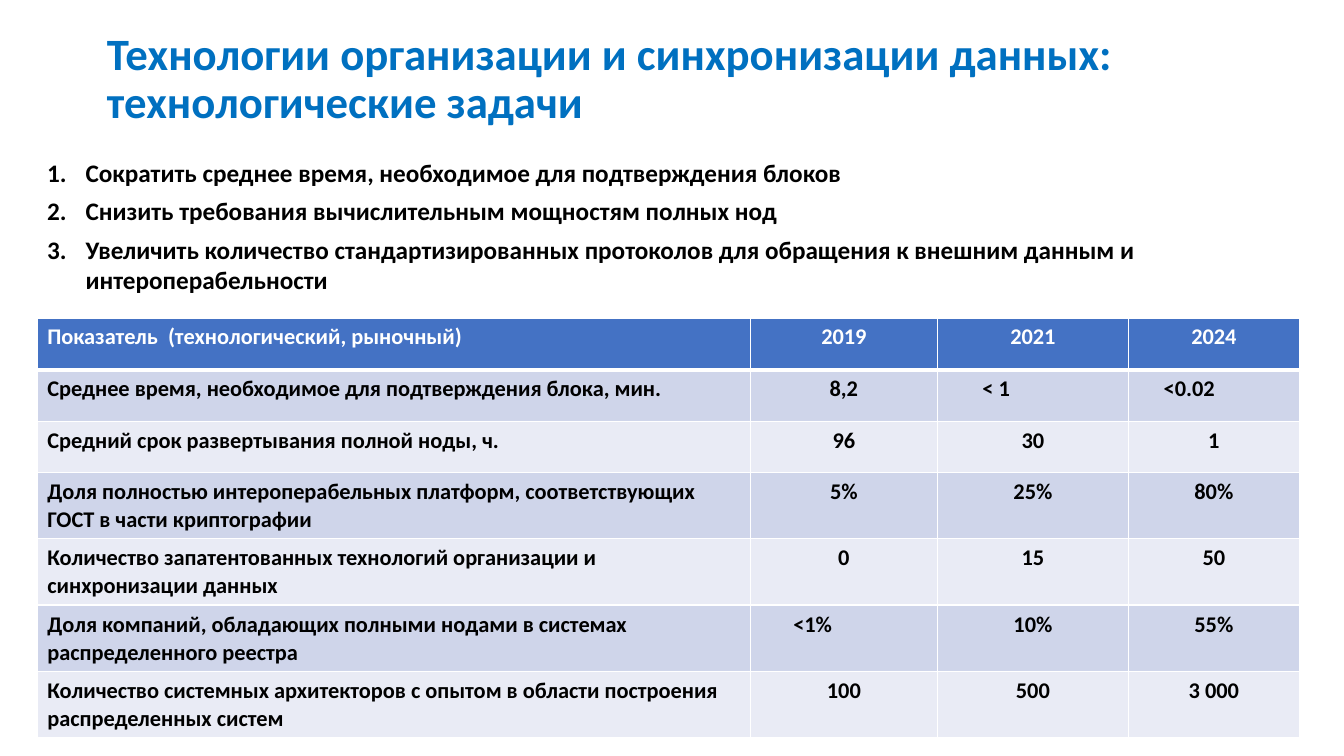
from lxml import etree
from pptx import Presentation
from pptx.dml.color import RGBColor
from pptx.enum import text
from pptx.oxml.ns import qn
from pptx import util as u

PX = 9144  # EMU in one px, 100 px to the inch
BLUE, BLACK, WHITE = "0070C0", "000000", "FFFFFF"
HEADER, BANDS = "4472C4", ("CFD5EA", "E9EBF5")

TITLE = "Технологии организации и синхронизации данных: технологические задачи"
TASKS = [
    "Сократить среднее время, необходимое для подтверждения блоков",
    "Снизить требования вычислительным мощностям полных нод",
    "Увеличить количество стандартизированных протоколов для обращения "
    "к внешним данным и интероперабельности",
]
ROWS = [
    ("Показатель  (технологический, рыночный)", "2019", "2021", "2024"),
    ("Среднее время, необходимое для подтверждения блока, мин.", "8,2", "< 1", "<0.02"),
    ("Средний срок развертывания полной ноды, ч.", "96", "30", "1"),
    ("Доля полностью интероперабельных платформ, соответствующих ГОСТ "
     "в части криптографии", "5%", "25%", "80%"),
    ("Количество запатентованных технологий организации и синхронизации данных",
     "0", "15", "50"),
    ("Доля компаний, обладающих полными нодами в системах распределенного реестра",
     "<1%", "10%", "55%"),
    ("Количество системных архитекторов с опытом в области построения "
     "распределенных систем", "100", "500", "3 000"),
]
COLUMNS = (707, 186, 189, 170)
ROW_HEIGHT = 51
# Right margins of the values set left of the column centre
MARGINS = {"< 1": 83, "<0.02": 59, "<1%": 72}


def px(n):
    return u.Emu(n * PX)


def color(value):
    return RGBColor.from_string(value)


def write(p, words, size=16, fill=BLACK, align="LEFT", spacing=None, before=0):
    p.alignment = getattr(text.PP_ALIGN, align)
    p.line_spacing = spacing
    p.space_before = u.Pt(before)
    r = p.add_run()
    r.text = words
    r.font.name, r.font.size, r.font.bold = "Calibri", u.Pt(size), True
    r.font.color.rgb = color(fill)


class SlideBuilder:
    def __init__(self, prs):
        self.slide = prs.slides.add_slide(prs.slide_layouts[5])

    def title(self, words, box):
        sp = self.slide.shapes.title
        sp.left, sp.top, sp.width, sp.height = map(px, box)
        tf = sp.text_frame
        tf.word_wrap, tf.auto_size = True, text.MSO_AUTO_SIZE.NONE
        tf.vertical_anchor = text.MSO_ANCHOR.MIDDLE
        write(tf.paragraphs[0], words, size=32, fill=BLUE, spacing=0.9)

    def numbered_list(self, items, box, indent):
        tf = self.slide.shapes.add_textbox(*map(px, box)).text_frame
        tf.word_wrap = True
        for i, item in enumerate(items):
            p = tf.add_paragraph() if i else tf.paragraphs[0]
            write(p, item, size=18, before=6 if i else 0)
            pPr = p._p.get_or_add_pPr()
            pPr.set("marL", str(px(indent)))
            pPr.set("indent", str(-px(indent)))
            etree.SubElement(pPr, qn("a:buFont"), typeface="+mj-lt")
            etree.SubElement(pPr, qn("a:buAutoNum"), type="arabicPeriod")

    def borders(self, cell, top, bottom):
        tcPr = cell._tc.get_or_add_tcPr()
        for side, width in (("L", 1), ("R", 1), ("T", top), ("B", bottom)):
            ln = etree.SubElement(tcPr, qn(f"a:ln{side}"), w=str(u.Pt(width)))
            solid = etree.SubElement(ln, qn("a:solidFill"))
            etree.SubElement(solid, qn("a:srgbClr"), val=WHITE)

    def table(self, rows, left, top):
        frame = self.slide.shapes.add_table(
            len(rows), len(COLUMNS), px(left), px(top),
            px(sum(COLUMNS)), px(ROW_HEIGHT * len(rows)))
        table = frame.table
        for column, width in zip(table.columns, COLUMNS):
            column.width = px(width)
        for i, row in enumerate(rows):
            table.rows[i].height = px(ROW_HEIGHT)
            for j, words in enumerate(row):
                cell = table.cell(i, j)
                self.borders(cell, 3 if i == 1 else 1, 1 if i else 3)
                cell.fill.solid()
                cell.fill.fore_color.rgb = color(BANDS[(i - 1) % 2] if i else HEADER)
                cell.margin_right = px(MARGINS.get(words, 10))
                write(cell.text_frame.paragraphs[0], words,
                      fill=BLACK if i else WHITE,
                      align="CENTER" if j else "LEFT",
                      spacing=u.Pt(20) if i else None)


def main():
    prs = Presentation()
    prs.slide_width, prs.slide_height = px(1333), px(750)
    s = SlideBuilder(prs)
    # Heading and tasks
    s.title(TITLE, (96, 7, 1150, 145))
    s.numbered_list(TASKS, (37, 151, 1269, 187), indent=38)
    # Target indicators by year
    s.table(ROWS, left=37, top=316)
    prs.save("out.pptx")


if __name__ == "__main__":
    main()
